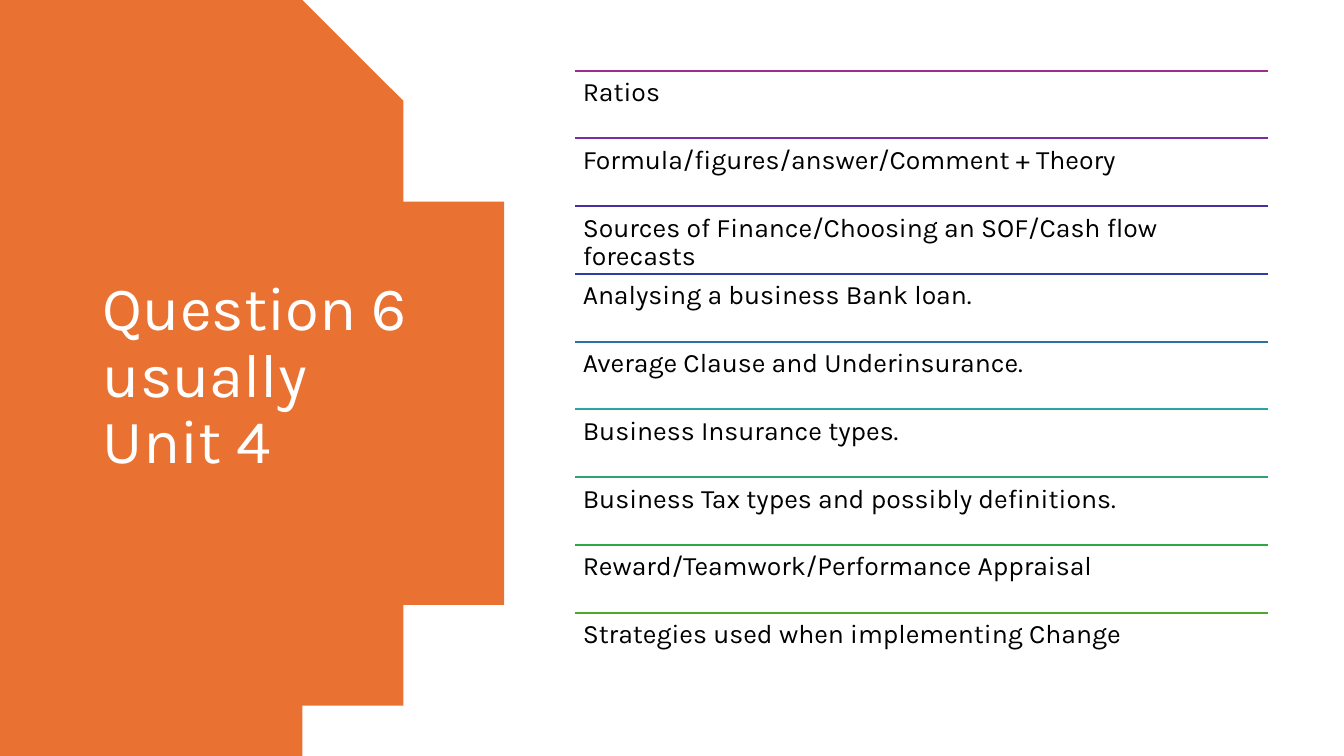
import math

from pptx import Presentation
from pptx.dml.color import RGBColor
from pptx.enum import shapes, text
from pptx.oxml.ns import qn
from pptx.util import Inches, Pt

FONT = "Karla"
ORANGE = RGBColor(0xE9, 0x71, 0x32)
WHITE = RGBColor(0xFF, 0xFF, 0xFF)
BLACK = RGBColor(0x00, 0x00, 0x00)

TOPICS = [
    ("Ratios", RGBColor(0xA0, 0x2B, 0x93)),
    ("Formula/figures/answer/Comment + Theory", RGBColor(0x7C, 0x2B, 0xA1)),
    ("Sources of Finance/Choosing an SOF/Cash flow forecasts",
     RGBColor(0x4B, 0x2C, 0xA2)),
    ("Analysing a business Bank loan.", RGBColor(0x2C, 0x3E, 0xA3)),
    ("Average Clause and Underinsurance.", RGBColor(0x2C, 0x71, 0xA4)),
    ("Business Insurance types.", RGBColor(0x2D, 0xA4, 0xA4)),
    ("Business Tax types and possibly definitions.", RGBColor(0x2D, 0xA5, 0x73)),
    ("Reward/Teamwork/Performance Appraisal", RGBColor(0x2E, 0xA6, 0x41)),
    ("Strategies used when implementing Change", RGBColor(0x4E, 0xA7, 0x2E)),
]


def write(frame, words, *, size, color, anchor, inset_x, inset_y):
    frame.word_wrap = True
    frame.auto_size = text.MSO_AUTO_SIZE.NONE
    frame.vertical_anchor = anchor
    frame.margin_left = frame.margin_right = Inches(inset_x)
    frame.margin_top = frame.margin_bottom = Inches(inset_y)
    para = frame.paragraphs[0]
    para.alignment = text.PP_ALIGN.LEFT
    para.line_spacing = 0.9
    span = para.add_run()
    span.text = words
    span.font.name = FONT
    span.font.size = Pt(size)
    span.font.color.rgb = color


def add_round_panel(page, left, top, width, height, shoulder):
    """Panel whose right side is an arc starting `shoulder` from the left."""
    bulge, half = width - shoulder, height / 2
    radius = (bulge ** 2 + half ** 2) / (2 * bulge)
    center_x, center_y = left + width - radius, top + half
    reach = math.asin(half / radius)
    steps = 120
    angles = [reach * (2 * step / steps - 1) for step in range(steps + 1)]
    arc = [(center_x + radius * math.cos(angle), center_y + radius * math.sin(angle))
           for angle in angles]
    builder = page.shapes.build_freeform(left, top, scale=Inches(1))
    builder.add_line_segments(arc + [(left, top + height)], close=True)
    panel = builder.convert_to_shape()
    panel.shadow.inherit = False
    panel.fill.solid()
    panel.fill.fore_color.rgb = ORANGE
    panel.line.fill.background()


def place_title(page, words, left, top, width, height):
    title = page.shapes.title
    title.left, title.top = Inches(left), Inches(top)
    title.width, title.height = Inches(width), Inches(height)
    title.element.getparent().append(title.element)  # bring in front of the panel
    write(title.text_frame, words, size=44, color=WHITE,
          anchor=text.MSO_ANCHOR.MIDDLE, inset_x=0.1, inset_y=0.05)


def add_topic_list(page, topics, left, top, width, height):
    group = page.shapes.add_group_shape()
    row = height / len(topics)
    for index, (words, color) in enumerate(topics):
        y = Inches(top + index * row)
        rule = group.shapes.add_connector(
            shapes.MSO_CONNECTOR.STRAIGHT, Inches(left), y, Inches(left + width), y)
        rule.line.color.rgb = color
        rule.line.width = Pt(1.5)
        properties = rule.element.spPr
        properties.append(properties.makeelement(qn("a:effectLst"), {}))
        box = group.shapes.add_textbox(Inches(left), y, Inches(width), Inches(row))
        write(box.text_frame, words, size=19, color=BLACK,
              anchor=text.MSO_ANCHOR.TOP, inset_x=0.08, inset_y=0.08)


def main():
    deck = Presentation()
    deck.slide_width, deck.slide_height = Inches(13.33), Inches(7.5)
    page = deck.slides.add_slide(deck.slide_layouts.get_by_name("Title Only"))
    add_round_panel(page, 0, 0, 4.93, 7.5, shoulder=2.83)
    place_title(page, "Question 6 usually Unit 4", 0.92, 0.7, 3.23, 6.09)
    add_topic_list(page, TOPICS, 5.7, 0.7, 6.88, 6.05)
    deck.save("out.pptx")


if __name__ == "__main__":
    main()
